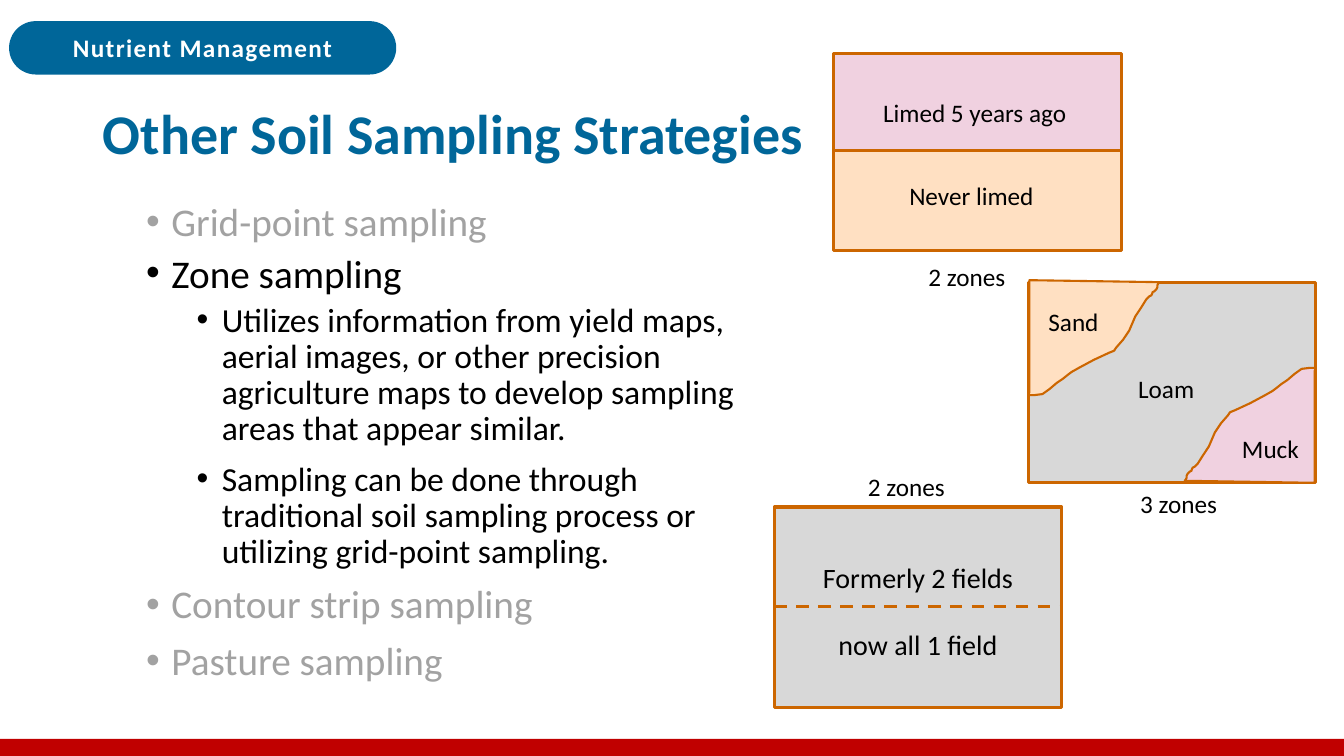
"""Build the slide on zone sampling with its three field maps."""
from lxml import etree
from pptx import Presentation
from pptx.dml.color import RGBColor
from pptx.enum.dml import MSO_LINE
from pptx.enum.shapes import MSO_CONNECTOR, MSO_SHAPE
from pptx.enum.text import MSO_ANCHOR, MSO_AUTO_SIZE, PP_ALIGN
from pptx.oxml.ns import qn
from pptx.util import Pt

PX = 9144
RECT, PILL = MSO_SHAPE.RECTANGLE, MSO_SHAPE.ROUNDED_RECTANGLE
LEFT, MID = PP_ALIGN.LEFT, PP_ALIGN.CENTER
TOP, CENTER = MSO_ANCHOR.TOP, MSO_ANCHOR.MIDDLE
HUES = {
    "red": "C00000", "blue": "006699", "white": "FFFFFF", "black": "000000",
    "dim": "A2A2A2", "pink": "F0D1E0", "sand": "FFE0C2", "gray": "D8D8D8",
    "edge": "CC6600",
}
HUES = {name: RGBColor.from_string(code) for name, code in HUES.items()}


def write(para, text, size, hue="black", bold=False, **form):
    run = para.add_run()
    run.text = text
    font = {"name": "Calibri", "size": Pt(size), "bold": bold}
    for name, value in font.items():
        setattr(run.font, name, value)
    run.font.color.rgb = HUES[hue]
    for name, value in form.items():
        setattr(para, name, value)
    return run


def paint(shape, hue, width=0):
    shape.shadow.inherit = False
    shape.fill.solid()
    shape.fill.fore_color.rgb = HUES[hue]
    if width:
        shape.line.color.rgb = HUES["edge"]
        shape.line.width = Pt(width)
    else:
        shape.line.fill.background()


deck = Presentation()
deck.slide_width, deck.slide_height = 1333 * PX, 750 * PX
slide = deck.slides.add_slide(deck.slide_layouts[1])
shapes = slide.shapes
title, body = shapes.title, slide.placeholders[1]

places = [(title, (92, 85, 1089, 100), CENTER), (body, (135, 200, 609, 505), TOP)]
for holder, place, anchor in places:
    for name, value in zip(("left", "top", "width", "height"), place):
        setattr(holder, name, value * PX)
    frame = holder.text_frame
    frame.auto_size = MSO_AUTO_SIZE.NONE
    frame.vertical_anchor = anchor
    frame.word_wrap = True

write(title.text_frame.paragraphs[0], "Other Soil Sampling Strategies", 40,
      "blue", True, alignment=LEFT, line_spacing=0.9)

items = [
    (0, "Grid-point sampling", "dim", 0.8, 0, 0),
    (0, "Zone sampling", "black", 0.8, 10, 0),
    (1, "Utilizes information from yield maps, aerial images, or other precision "
        "agriculture maps to develop sampling areas that appear similar.",
     "black", 0.9, 5, 5),
    (1, "Sampling can be done through traditional soil sampling process or "
        "utilizing grid-point sampling.", "black", 0.9, 5, 0),
    (0, "Contour strip sampling", "dim", 0.9, 10, 0),
    (0, "Pasture sampling", "dim", 0.9, 10, 0),
]
frame = body.text_frame
for i, (level, text, hue, gap, above, below) in enumerate(items):
    para = frame.add_paragraph() if i else frame.paragraphs[0]
    write(para, text, 24 if level else 28, hue, level=level, line_spacing=gap,
          space_before=Pt(above), space_after=Pt(below))
    props = para._p.get_or_add_pPr()
    props.set("marL", str((75 if level else 25) * PX))
    props.set("indent", str(-25 * PX))
    etree.SubElement(props, qn("a:buChar")).set("char", "•")

blocks = [
    (RECT, (0, 733, 1333, 17), "red", 0),
    (PILL, (9, 21, 384, 53), "blue", 0),
    (RECT, (827, 53, 285, 100), "pink", 2.25),
    (RECT, (827, 149, 285, 100), "sand", 2.25),
    (RECT, (768, 503, 285, 199), "gray", 2.25),
    (RECT, (1020, 280, 285, 199), "gray", 2.25),
]
for kind, place, hue, width in blocks:
    block = shapes.add_shape(kind, *(n * PX for n in place))
    paint(block, hue, width)
    if kind == PILL:
        block.adjustments[0] = 0.5
        block.text_frame.vertical_anchor = CENTER
        run = write(block.text_frame.paragraphs[0], "Nutrient Management", 18,
                    "white", True, alignment=MID)
        run._r.get_or_add_rPr().set("spc", "100")

split = shapes.add_connector(MSO_CONNECTOR.STRAIGHT, 768 * PX, 602 * PX,
                             1053 * PX, 602 * PX)
split.line.color.rgb = HUES["edge"]
split.line.width = Pt(2.25)
split.line.dash_style = MSO_LINE.DASH
etree.SubElement(split._element.spPr, qn("a:effectLst"))

bank = [(1020, 392), (1034, 391), (1048, 380), (1059, 372), (1070, 365),
        (1100, 350), (1107, 345), (1120, 328), (1126, 314), (1137, 297),
        (1142, 293), (1143, 290), (1147, 287), (1148, 283), (1150, 280)]
ends = [bank[0], *bank, bank[-1]]
curve = [(1021, 278), (1021, 389), bank[0]]
for a, b, c, d in zip(ends, ends[1:], ends[2:], ends[3:]):
    half = [(9 * (q + r) - p - s) / 16 for p, q, r, s in zip(a, b, c, d)]
    curve += [tuple(half), c]
turned = [(2325 - x, 757 - y) for x, y in curve]
for points, hue in ((curve, "sand"), (turned, "pink")):
    draft = shapes.build_freeform(*points[0], scale=PX)
    draft.add_line_segments(points[1:], close=True)
    paint(draft.convert_to_shape(), hue, 1.5)

labels = [
    ((911, 254, 119, 40), ["2 zones"], 18, LEFT),
    ((851, 463, 119, 40), ["2 zones"], 18, LEFT),
    ((1121, 480, 119, 40), ["3 zones"], 18, LEFT),
    ((802, 551, 217, 111), ["Formerly 2 fields", "now all 1 field"], 20, MID),
    ((1030, 299, 73, 40), ["Sand"], 18, LEFT),
    ((1119, 365, 86, 40), ["Loam"], 18, LEFT),
    ((1222, 425, 83, 40), ["Muck"], 18, LEFT),
    ((866, 92, 209, 40), ["Limed 5 years ago"], 18, LEFT),
    ((892, 174, 156, 40), ["Never limed"], 18, LEFT),
]
for place, lines, size, align in labels:
    frame = shapes.add_textbox(*(n * PX for n in place)).text_frame
    frame.word_wrap = True
    for i, text in enumerate(lines):
        para = frame.add_paragraph() if i else frame.paragraphs[0]
        write(para, text, size, alignment=align, space_before=Pt(24 * i))

deck.save("out.pptx")
